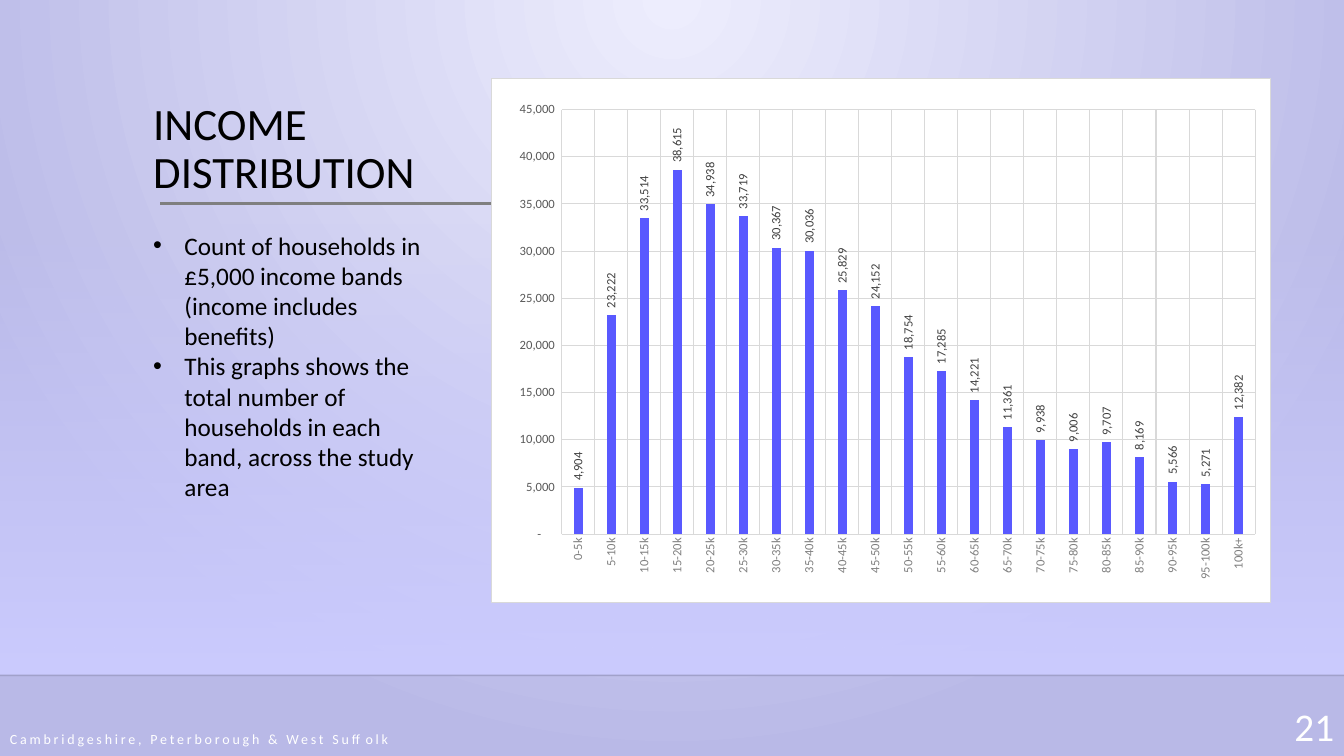
from copy import deepcopy
from dataclasses import dataclass

from lxml.etree import SubElement
from pptx import Presentation
from pptx.chart.data import CategoryChartData
from pptx.dml.color import RGBColor
from pptx.enum.chart import XL_CHART_TYPE, XL_LABEL_POSITION, XL_TICK_MARK
from pptx.enum.shapes import MSO_CONNECTOR, MSO_SHAPE
from pptx.enum.text import MSO_ANCHOR, MSO_AUTO_SIZE, PP_ALIGN
from pptx.oxml import parse_xml
from pptx.oxml.ns import nsdecls, qn
from pptx.util import Inches, Pt


@dataclass(frozen=True)
class Theme:
    font: str = "Calibri"
    text: str = "000000"
    light: str = "FFFFFF"
    glow: str = "EDEDFD"
    edge: str = "B9B9E7"
    haze: str = "CCCCFF"
    seam: str = "000001"
    rule: str = "7F7F7F"
    grid: str = "D9D9D9"
    bar: str = "5959FF"
    label: str = "404040"
    value_axis: str = "595959"
    category_axis: str = "808080"
    title_size: int = 32
    gap_size: int = 24
    body_size: int = 18
    number_size: int = 28
    footer_size: int = 10
    chart_size: int = 9


THEME = Theme()
WIDTH, HEIGHT = Inches(13.33), Inches(7.5)
NUMBER_FORMAT = '_-* #,##0_-;\\-* #,##0_-;_-* "-"??_-;_-@_'
BANDS = [f"{low}-{low + 5}k" for low in range(0, 100, 5)] + ["100k+"]
HOUSEHOLDS = [4904, 23222, 33514, 38615, 34938, 33719, 30367, 30036, 25829, 24152, 18754,
              17285, 14221, 11361, 9938, 9006, 9707, 8169, 5566, 5271, 12382]
BULLETS = [
    "Count of households in £5,000 income bands\v(income includes benefits)",
    "This graphs shows the total number of households in each band, across the study area",
]


def area(left, top, width, height):
    """Turn percentages of the slide into lengths."""
    return (int(WIDTH * left / 100), int(HEIGHT * top / 100),
            int(WIDTH * width / 100), int(HEIGHT * height / 100))


def place(shape, *shares):
    shape.left, shape.top, shape.width, shape.height = area(*shares)


def style(font, size, color):
    font.name, font.size = THEME.font, Pt(size)
    font.color.rgb = RGBColor.from_string(color)


def style_line(line, color, width):
    line.color.rgb = RGBColor.from_string(color)
    line.width = Pt(width)


def set_gradient(fill, holder, stops, direction):
    """Give the fill two stops of (colour, opacity in percent)."""
    fill.gradient()
    marks = "".join(
        f'<a:gs pos="{index * 100000}"><a:srgbClr val="{color}">'
        f'<a:alpha val="{opacity * 1000}"/></a:srgbClr></a:gs>'
        for index, (color, opacity) in enumerate(stops))
    previous = next(holder.iter(qn("a:gradFill")))
    previous.getparent().replace(previous, parse_xml(
        f'<a:gradFill {nsdecls("a")} rotWithShape="1"><a:gsLst>{marks}</a:gsLst>'
        f'{direction}</a:gradFill>'))


def add_rule(page, left, right, top, color, width, opacity=100):
    x, y, span, _ = area(left, top, right - left, 0)
    rule = page.shapes.add_connector(MSO_CONNECTOR.STRAIGHT, x, y, x + span, y)
    style_line(rule.line, color, width)
    tint = next(rule.element.spPr.iter(qn("a:srgbClr")))
    SubElement(tint, qn("a:alpha")).set("val", str(opacity * 1000))
    SubElement(rule.element.spPr, qn("a:effectLst"))


def add_backdrop(page):
    set_gradient(page.background.fill, page.element, [(THEME.glow, 100), (THEME.edge, 100)],
                 '<a:path path="circle"><a:fillToRect l="43000" r="43000" b="100000"/></a:path>')
    haze = page.shapes.add_shape(MSO_SHAPE.RECTANGLE, *area(0, 29.47, 100, 59.87))
    haze.shadow.inherit = False
    haze.line.fill.background()
    set_gradient(haze.fill, haze.element, [(THEME.haze, 0), (THEME.haze, 100)],
                 '<a:lin ang="5400000" scaled="0"/>')
    add_rule(page, 0, 100, 89.33, THEME.seam, 1, opacity=20)
    add_rule(page, 11.93, 90.77, 26.93, THEME.rule, 2.5)


def add_label(page, shares, text, size, align=PP_ALIGN.LEFT, anchor=MSO_ANCHOR.TOP):
    box = page.shapes.add_textbox(*area(*shares))
    box.text_frame.word_wrap = True
    box.text_frame.vertical_anchor = anchor
    box.text_frame.text = text
    para = box.text_frame.paragraphs[0]
    para.alignment = align
    style(para.runs[0].font, size, THEME.light)
    return para.runs[0]


def bring_forward(shape):
    shape.element.getparent().append(shape.element)


def fill_title(title):
    place(title, 10.65, 12.8, 31.13, 14.27)
    bring_forward(title)
    frame = title.text_frame
    frame.auto_size, frame.word_wrap = MSO_AUTO_SIZE.NONE, True
    frame.vertical_anchor = MSO_ANCHOR.TOP
    para = frame.paragraphs[0]
    para.alignment, para.line_spacing = PP_ALIGN.LEFT, 0.9
    for text, size in (("INCOME", THEME.title_size), (" ", THEME.gap_size),
                       ("DISTRIBUTION", THEME.title_size)):
        span = para.add_run()
        span.text = text
        style(span.font, size, THEME.text)


def fill_bullets(body):
    place(body, 10.65, 29.73, 23.18, 41.73)
    bring_forward(body)
    frame = body.text_frame
    frame.text = "\n".join(BULLETS)
    frame.auto_size, frame.word_wrap = MSO_AUTO_SIZE.NONE, True
    for para in frame.paragraphs:
        para.space_before = Pt(0)
        properties = para._p.get_or_add_pPr()
        properties.set("marL", str(Inches(0.31)))
        properties.set("indent", str(-Inches(0.31)))
        SubElement(properties, qn("a:buFont")).set("typeface", "Arial")
        SubElement(properties, qn("a:buChar")).set("char", "•")
        for span in para.runs:
            style(span.font, THEME.body_size, THEME.text)
        # Line breaks take the size of the text around them
        for line_break in para._p.findall(qn("a:br")):
            line_break.append(deepcopy(para.runs[0].font._element))


def style_axis(axis, color):
    axis.major_tick_mark = axis.minor_tick_mark = XL_TICK_MARK.NONE
    axis.has_major_gridlines = True
    style_line(axis.major_gridlines.format.line, THEME.grid, 0.75)
    style(axis.tick_labels.font, THEME.chart_size, color)


def frame_chart(chart):
    """Paint the chart and plot areas, and fix the inner plot layout."""
    panel = (f'<c:spPr {nsdecls("c", "a")}><a:solidFill><a:srgbClr val="{THEME.light}"/>'
             '</a:solidFill><a:ln{}</a:ln></c:spPr>')
    border = f' w="9525"><a:solidFill><a:srgbClr val="{THEME.grid}"/></a:solidFill>'
    chart.element.find(qn("c:txPr")).addprevious(parse_xml(panel.format(border)))
    plot_area = chart.element.find(qn("c:chart")).find(qn("c:plotArea"))
    plot_area.append(parse_xml(panel.format("><a:noFill/>")))
    for layout in plot_area.findall(qn("c:layout")):
        plot_area.remove(layout)
    layout = parse_xml(f'<c:layout {nsdecls("c")}><c:manualLayout/></c:layout>')
    for tag, value in (("layoutTarget", "inner"), ("xMode", "edge"), ("yMode", "edge"),
                       ("x", 0.09), ("y", 0.06), ("w", 0.89), ("h", 0.81)):
        SubElement(layout[0], qn(f"c:{tag}")).set("val", str(value))
    plot_area.insert(0, layout)


def add_income_chart(page):
    data = CategoryChartData()
    data.categories = BANDS
    data.add_series("Series 1", HOUSEHOLDS)
    chart = page.shapes.add_chart(XL_CHART_TYPE.COLUMN_CLUSTERED,
                                  *area(36.53, 10.27, 58.06, 69.47), data).chart
    chart.has_title = chart.has_legend = False
    style(chart.font, 10, THEME.text)

    # Axes
    style_axis(chart.category_axis, THEME.category_axis)
    style_line(chart.category_axis.format.line, THEME.grid, 0.75)
    values = chart.value_axis
    style_axis(values, THEME.value_axis)
    values.format.line.fill.background()
    values.minimum_scale, values.maximum_scale, values.major_unit = 0, 45000, 5000

    # Columns and their labels
    plot = chart.plots[0]
    plot.gap_width, plot.overlap, plot.vary_by_categories = 267, -43, False
    bars = plot.series[0].format.fill
    bars.solid()
    bars.fore_color.rgb = RGBColor.from_string(THEME.bar)
    plot.has_data_labels = True
    labels = plot.data_labels
    labels.show_value, labels.position = True, XL_LABEL_POSITION.OUTSIDE_END
    style(labels.font, THEME.chart_size, THEME.label)
    for numbers in (values.tick_labels, labels):
        numbers.number_format, numbers.number_format_is_linked = NUMBER_FORMAT, False
    for text_body in chart.element.xpath(".//c:catAx/c:txPr/a:bodyPr | .//c:dLbls/c:txPr/a:bodyPr"):
        text_body.set("rot", "-5400000")
        text_body.set("vert", "horz")
    frame_chart(chart)


def main():
    deck = Presentation()
    deck.slide_width, deck.slide_height = WIDTH, HEIGHT
    page = deck.slides.add_slide(deck.slide_layouts[1])
    add_backdrop(page)
    add_income_chart(page)
    fill_title(page.shapes.title)
    footer = add_label(page, (0, 95.47, 48.69, 4.53), "Cambridgeshire, Peterborough & West Suffolk",
                       THEME.footer_size, anchor=MSO_ANCHOR.MIDDLE)
    footer.font._element.set("spc", "200")
    fill_bullets(page.placeholders[1])
    add_label(page, (93.4, 92.27, 6.6, 7.33), "21", THEME.number_size, align=PP_ALIGN.RIGHT)
    deck.save("out.pptx")


if __name__ == "__main__":
    main()
